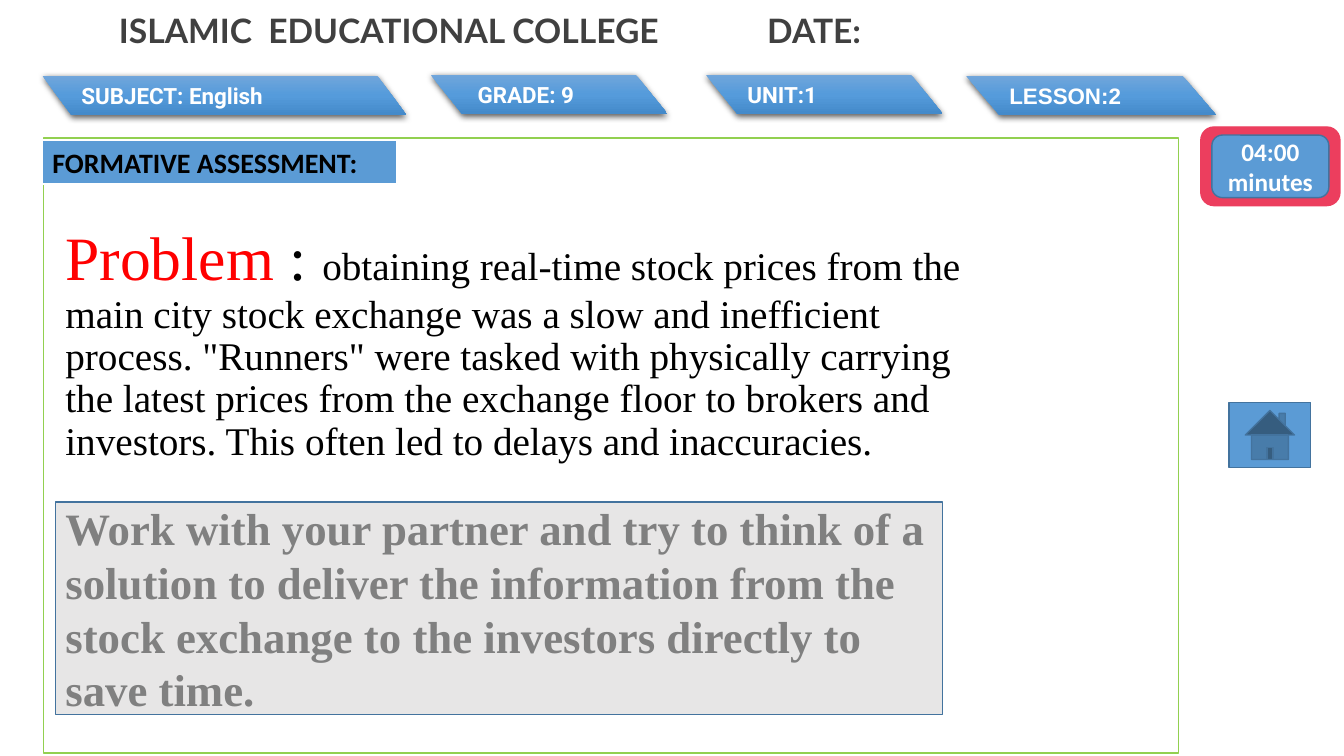
from pptx import Presentation
from pptx.dml.color import RGBColor
from pptx.enum.shapes import MSO_SHAPE
from pptx.enum.text import MSO_ANCHOR, PP_ALIGN
from pptx.oxml import parse_xml
from pptx.oxml.ns import nsdecls
from pptx.util import Inches, Pt


def add_box(shapes, kind, box, fill=None, line=None, line_width=1):
    shape = shapes.add_shape(kind, *[Inches(length) for length in box])
    shape.shadow.inherit = False
    for part, color in ((shape.fill, fill), (shape.line.fill, line)):
        if color:
            part.solid()
            part.fore_color.rgb = RGBColor.from_string(color)
        else:
            part.background()
    shape.line.width = Pt(line_width)
    return shape


def write_text(shape, text, size, font_name, color, bold=True,
               align=PP_ALIGN.LEFT, anchor=MSO_ANCHOR.MIDDLE):
    frame = shape.text_frame
    frame.word_wrap = True
    frame.vertical_anchor = anchor
    paragraph = frame.paragraphs[0]
    paragraph.text = text
    paragraph.alignment = align
    paragraph.font.size = Pt(size)
    paragraph.font.name = font_name
    paragraph.font.bold = bold
    paragraph.font.color.rgb = RGBColor.from_string(color)
    return paragraph


presentation = Presentation()
presentation.slide_width = Inches(13.33)
presentation.slide_height = Inches(7.5)
slide = presentation.slides.add_slide(presentation.slide_layouts[6])
shapes = slide.shapes

# Slanted banners with gradient and shadow
banners = [
    ("SUBJECT: English", 0.42, 0.75, 3.61, 0.04, "Roboto"),
    (" GRADE: 9", 4.27, 0.74, 2.35, 0.067, "Roboto"),
    ("UNIT:1", 7, 0.74, 2.35, 0.067, "Roboto"),
    ("LESSON:2", 9.58, 0.75, 2.48, 0.067, "Arial"),
]
gradient_stops = "".join(
    f'<a:gs pos="{position}"><a:srgbClr val="{color}"/></a:gs>'
    for position, color in ((0, "71A6DB"), (50000, "559BDB"), (100000, "448ACA")))
gradient_xml = (f'<a:gradFill {nsdecls("a")} rotWithShape="1"><a:gsLst>{gradient_stops}'
                '</a:gsLst><a:lin ang="5400000" scaled="0"/></a:gradFill>')
shadow_xml = (f'<a:outerShdw {nsdecls("a")} blurRad="{Pt(4.5)}" dist="{Pt(1.5)}" '
              'dir="5400000" algn="ctr" rotWithShape="0"><a:srgbClr val="000000">'
              '<a:alpha val="63000"/></a:srgbClr></a:outerShdw>')
for label, left, top, width, slant, font_name in banners:
    banner = add_box(shapes, MSO_SHAPE.DOUBLE_WAVE, (left, top, width, 0.39))
    banner.adjustments[0] = 0
    banner.adjustments[1] = slant
    properties = banner._element.spPr
    no_fill = properties.find("{*}noFill")
    properties.replace(no_fill, parse_xml(gradient_xml))
    properties.find("{*}effectLst").append(parse_xml(shadow_xml))
    write_text(banner, label, 16, font_name, "FFFFFF")

# Heading, with a tab stop for the date
heading = shapes.add_textbox(Inches(0.51), Inches(0.05), Inches(12.67), Inches(0.52))
heading.text_frame.margin_left = Inches(0.67)
paragraph = write_text(heading, "ISLAMIC  EDUCATIONAL COLLEGE\tDATE:", 24, "Lato",
                       "404040", anchor=MSO_ANCHOR.TOP)
tab_stops = parse_xml(f'<a:tabLst {nsdecls("a")}><a:tab pos="{Inches(6.43)}" algn="l"/></a:tabLst>')
paragraph._p.get_or_add_pPr().insert(0, tab_stops)

# Timer
timer = shapes.add_group_shape()
add_box(timer.shapes, MSO_SHAPE.ROUNDED_RECTANGLE, (11.91, 1.26, 1.38, 0.78), "EC3E5E", "EC3E5E")
timer_face = add_box(timer.shapes, MSO_SHAPE.ROUNDED_RECTANGLE, (12.02, 1.34, 1.16, 0.62),
                     "5B9BD5", "43739E")
write_text(timer_face, "04:00 minutes", 18, "Calibri", "FFFFFF", align=PP_ALIGN.CENTER)

# Home button
add_box(shapes, MSO_SHAPE.ACTION_BUTTON_HOME, (12.19, 3.99, 0.81, 0.65), "5B9BD5", "43739E")

# Assessment frame and its label
add_box(shapes, MSO_SHAPE.RECTANGLE, (0.43, 1.37, 11.26, 6.1), line="92D050")
frame_label = add_box(shapes, MSO_SHAPE.RECTANGLE, (0.42, 1.39, 3.52, 0.44),
                      "5B9BD5", "FFFFFF", 1.5)
write_text(frame_label, "FORMATIVE ASSESSMENT:", 20, "Calibri", "000000", anchor=MSO_ANCHOR.TOP)

# Problem statement
problem = shapes.add_textbox(Inches(0.55), Inches(2.21), Inches(9.22), Inches(4.74))
paragraph = write_text(problem, "", 28, "Times New Roman", "000000", bold=False,
                       anchor=MSO_ANCHOR.TOP)
paragraph.line_spacing = 0.9
problem_runs = [
    ("Problem", 44, "FF0000"),
    (" : ", 44, "000000"),
    ("obtaining real-time stock prices from the main city stock exchange was a slow and "
     "inefficient process. \"Runners\" were tasked with physically carrying the latest "
     "prices from the exchange floor to brokers and investors. This often led to delays "
     "and inaccuracies.", 28, "000000"),
]
for text, size, color in problem_runs:
    run = paragraph.add_run()
    run.text = text
    run.font.size = Pt(size)
    run.font.color.rgb = RGBColor.from_string(color)

# Task for pairs
task = add_box(shapes, MSO_SHAPE.RECTANGLE, (0.55, 4.98, 8.8, 2.11), "E7E6E6", "43739E")
write_text(task, "Work with your partner and try to think of a solution to deliver the "
           "information from the stock exchange to the investors directly to save time.",
           32, "Times New Roman", "808080")

presentation.save("out.pptx")
